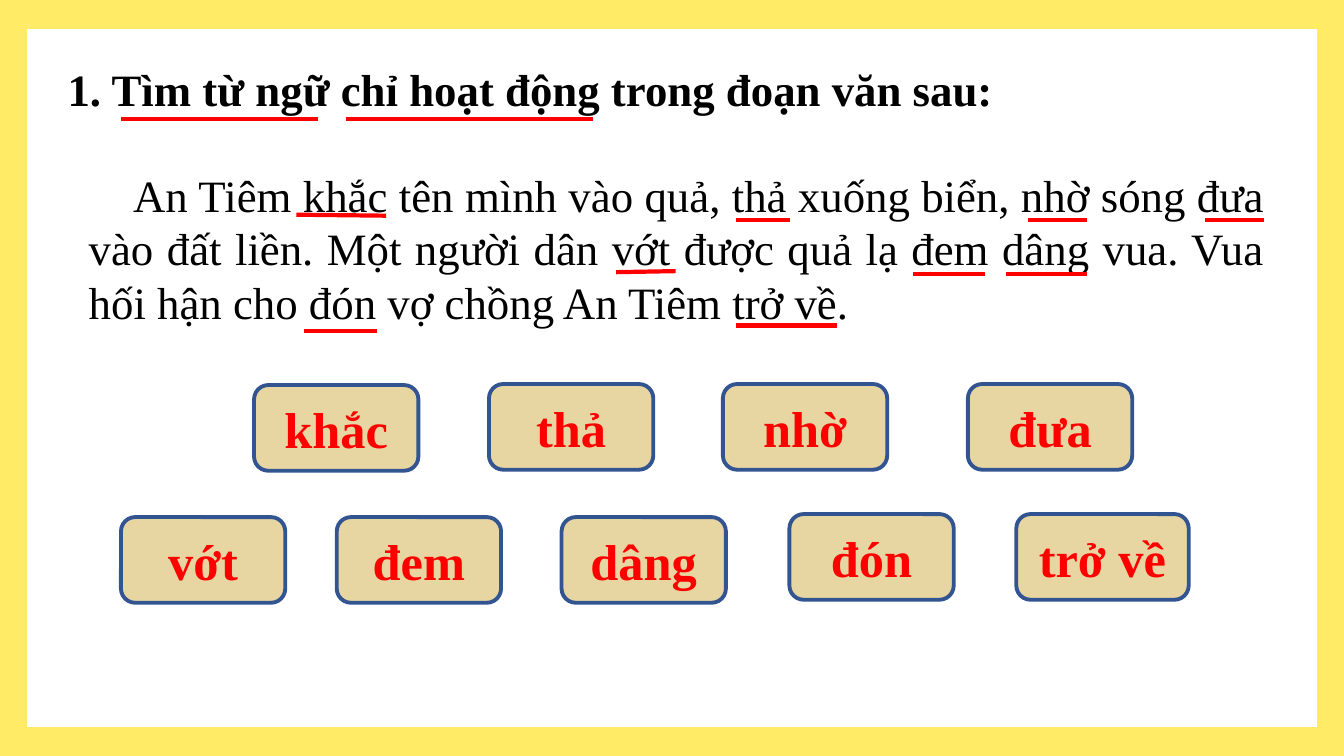
from lxml import etree
from pptx import Presentation
from pptx import util as u
from pptx.dml.color import RGBColor
from pptx.enum import shapes, text
from pptx.oxml.ns import qn

YELLOW = RGBColor(0xFF, 0xEB, 0x66)
WHITE = RGBColor(0xFF, 0xFF, 0xFF)
BLACK = RGBColor(0, 0, 0)
RED = RGBColor(0xFF, 0, 0)
GOLD = RGBColor(0xBF, 0x90, 0)
BLUE = RGBColor(0x32, 0x54, 0x91)
FONT = "Times New Roman"


def add_box(kind, x, y, w, h, fill):
    sp = s.shapes.add_shape(kind, u.Inches(x), u.Inches(y), u.Inches(w), u.Inches(h))
    sp.shadow.inherit = False
    sp.fill.solid()
    sp.fill.fore_color.rgb = fill
    return sp


def write(sp, words, size, color, bold, align, anchor):
    tf = sp.text_frame
    tf.text = words
    tf.word_wrap = True
    tf.auto_size = text.MSO_AUTO_SIZE.NONE
    tf.vertical_anchor = anchor
    p = tf.paragraphs[0]
    p.alignment = align
    p.space_before = u.Pt(0)
    f = p.runs[0].font
    f.name, f.size, f.bold = FONT, u.Pt(size), bold
    f.color.rgb = color
    return p


prs = Presentation()
prs.slide_width, prs.slide_height = u.Inches(13.33), u.Inches(7.5)
s = prs.slides.add_slide(prs.slide_layouts[1])

# Yellow frame and white panel, behind the placeholders
frame = add_box(shapes.MSO_SHAPE.RECTANGLE, 0, 0, 13.33, 7.5, YELLOW)
panel = add_box(shapes.MSO_SHAPE.RECTANGLE, 0.27, 0.29, 12.79, 6.92, WHITE)
for sp in (panel, frame):
    sp.line.fill.background()
    s.shapes._spTree.insert(2, sp._element)

# Task heading
title = s.shapes.title
title.left, title.top = u.Inches(0.57), u.Inches(0.56)
title.width, title.height = u.Inches(12.37), u.Inches(0.64)
write(title, "1. Tìm từ ngữ chỉ hoạt động trong đoạn văn sau:", 32, BLACK, True,
      text.PP_ALIGN.LEFT, text.MSO_ANCHOR.TOP)

# Passage, with a first-line indent and no bullet
body = s.placeholders[1]
body.left, body.top = u.Inches(0.78), u.Inches(1.61)
body.width, body.height = u.Inches(11.87), u.Inches(1.72)
p = write(body, "An Tiêm khắc tên mình vào quả, thả xuống biển, nhờ sóng đưa vào đất liền. "
          "Một người dân vớt được quả lạ đem dâng vua. Vua hối hận cho đón vợ chồng "
          "An Tiêm trở về.", 32, BLACK, False,
          text.PP_ALIGN.JUSTIFY, text.MSO_ANCHOR.TOP)
pPr = p._p.get_or_add_pPr()
pPr.set("marL", "0")
pPr.set("indent", str(u.Inches(0.44)))
etree.SubElement(pPr, qn("a:buNone"))

# Red underlines: x1, y1, x2, y2
underlines = [
    (1.2, 1.18, 3.15, 1.18), (3.43, 1.18, 5.88, 1.18),
    (2.94, 2.13, 3.83, 2.14), (7.3, 2.18, 7.84, 2.18),
    (6.11, 2.7, 6.7, 2.69), (10.2, 2.18, 10.78, 2.18),
    (11.95, 2.18, 12.54, 2.18), (9.06, 2.72, 9.77, 2.72),
    (9.98, 2.72, 10.78, 2.72), (3.02, 3.28, 3.74, 3.28),
    (7.3, 3.23, 8.3, 3.23),
]
for ends in underlines:
    line = s.shapes.add_connector(shapes.MSO_CONNECTOR.STRAIGHT, *map(u.Inches, ends))
    line.line.color.rgb = RED
    line.line.width = u.Pt(3)
    etree.SubElement(line._element.spPr, qn("a:effectLst"))

# Answer cards: word, x, y, width
cards = [
    ("khắc", 2.52, 3.82, 1.63), ("thả", 4.85, 3.81, 1.63),
    ("nhờ", 7.17, 3.81, 1.63), ("đưa", 9.6, 3.81, 1.63),
    ("vớt", 1.2, 5.13, 1.63), ("đem", 3.34, 5.13, 1.63),
    ("dâng", 5.57, 5.13, 1.63), ("đón", 7.83, 5.1, 1.63),
    ("trở về", 10.08, 5.1, 1.71),
]
for word, x, y, w in cards:
    sp = add_box(shapes.MSO_SHAPE.ROUNDED_RECTANGLE, x, y, w, 0.85, GOLD)
    color = sp._element.spPr.find(qn("a:solidFill"))[0]
    etree.SubElement(color, qn("a:alpha"), val="37000")
    sp.line.color.rgb = BLUE
    sp.line.width = u.Pt(2.75)
    write(sp, word, 36, RED, True, text.PP_ALIGN.CENTER, text.MSO_ANCHOR.MIDDLE)

prs.save("out.pptx")
